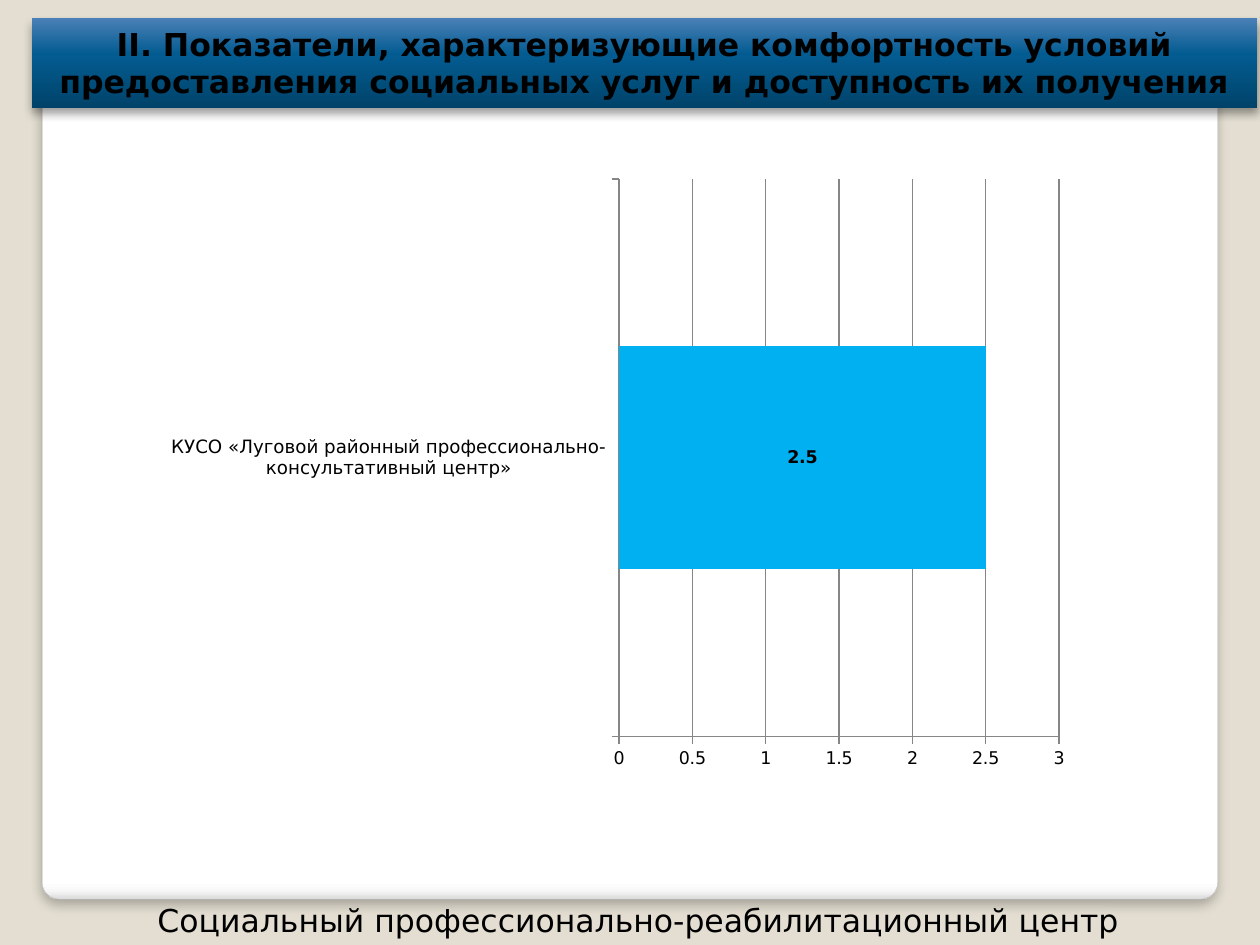
from lxml import etree
from pptx import Presentation
from pptx.chart.data import CategoryChartData
from pptx.dml.color import RGBColor
from pptx.enum.chart import XL_CHART_TYPE as ChartType, XL_LABEL_POSITION as LabelPosition
from pptx.enum.chart import XL_TICK_MARK as TickMark
from pptx.enum.shapes import MSO_SHAPE as ShapeType
from pptx.enum.text import MSO_ANCHOR as Anchor, MSO_AUTO_SIZE as AutoSize, PP_ALIGN as Align
from pptx.oxml import parse_xml
from pptx.oxml.ns import nsdecls, qn
from pptx.util import Cm, Pt

FONT = "DejaVu Sans"
BLACK = "000000"


def color(hex_string):
    return RGBColor.from_string(hex_string)


def style_font(font, size, bold=False):
    font.name = FONT
    font.size = Pt(size)
    font.bold = bold
    font.color.rgb = color(BLACK)


def set_gradient(shape, stops, angle):
    """Fill with (percent, hex) stops; the angle runs counter-clockwise."""
    shape.fill.gradient()
    shape.fill.gradient_angle = angle
    stop_list = shape.element.spPr.find(".//" + qn("a:gsLst"))
    for stop in list(stop_list):
        stop_list.remove(stop)
    for percent, hex_string in stops:
        stop = etree.SubElement(stop_list, qn("a:gs"), pos=str(percent * 1000))
        etree.SubElement(stop, qn("a:srgbClr"), val=hex_string)


def set_shadow(shape, opacity, blur, distance):
    """Drop a black shadow straight down."""
    shape.shadow.inherit = False
    effects = shape.element.spPr.find(qn("a:effectLst"))
    effects.append(parse_xml(
        f'<a:outerShdw {nsdecls("a")} blurRad="{Pt(blur)}" dist="{Pt(distance)}" '
        f'dir="5400000" algn="t" rotWithShape="0"><a:srgbClr val="{BLACK}">'
        f'<a:alpha val="{opacity * 1000}"/></a:srgbClr></a:outerShdw>'))


def place_text(shape, text, box, bold=False):
    shape.left, shape.top, shape.width, shape.height = box
    text_frame = shape.text_frame
    text_frame.word_wrap = True
    text_frame.auto_size = AutoSize.NONE
    text_frame.vertical_anchor = Anchor.TOP
    text_frame.text = text
    paragraph = text_frame.paragraphs[0]
    paragraph.alignment = Align.CENTER
    paragraph.line_spacing = 1.0
    paragraph.space_before = Pt(0)
    style_font(paragraph.runs[0].font, 18, bold)


def add_panel(slide, box):
    panel = slide.shapes.add_shape(ShapeType.ROUNDED_RECTANGLE, *box)
    panel.adjustments[0] = 0.02
    set_gradient(panel, [(0, "FFFFFF"), (98, "FFFFFF"), (99, "F7F7F7"), (100, "DADADA")], 270)
    panel.line.color.rgb = color("A4A4A4")
    panel.line.width = Pt(0.16)
    set_shadow(panel, 25, 6, 4)
    # The panel lies behind the title
    slide.shapes.title.element.addprevious(panel.element)


def format_title(slide, text, box):
    title = slide.shapes.title
    place_text(title, text, box, bold=True)
    set_gradient(title, [(0, "00436A"), (60, "035C91"), (100, "4A80B7")], 90)
    title.line.fill.background()
    set_shadow(title, 40, 5.2, 3)


def add_caption(slide, text, box):
    place_text(slide.shapes.add_textbox(*box), text, box)


def set_plot_area(chart, x, y, width, height):
    """Fix the inner plot area as fractions of the chart."""
    plot_area = chart.element.find(".//" + qn("c:plotArea"))
    for layout in plot_area.findall(qn("c:layout")):
        plot_area.remove(layout)
    layout = etree.Element(qn("c:layout"))
    manual = etree.SubElement(layout, qn("c:manualLayout"))
    settings = [("layoutTarget", "inner"), ("xMode", "edge"), ("yMode", "edge"),
                ("x", x), ("y", y), ("w", width), ("h", height)]
    for name, value in settings:
        etree.SubElement(manual, qn("c:" + name), val=str(value))
    plot_area.insert(0, layout)


def add_score_chart(slide, box):
    data = CategoryChartData()
    data.categories = ["КУСО «Луговой районный профессионально-консультативный центр»"]
    data.add_series("Series 1", [2.5])
    chart = slide.shapes.add_chart(ChartType.BAR_STACKED, *box, data).chart
    chart.has_legend = False
    chart.has_title = False
    style_font(chart.font, 10)
    set_plot_area(chart, 0.486, 0.028, 0.482, 0.898)

    # Bar and its value
    plot = chart.plots[0]
    plot.gap_width = 150
    plot.overlap = 100
    plot.vary_by_categories = False
    series = plot.series[0]
    series.format.fill.solid()
    series.format.fill.fore_color.rgb = color("00B0F0")
    labels = series.data_labels
    labels.show_value = True
    labels.position = LabelPosition.CENTER
    style_font(labels.font, 10, bold=True)

    # Axes and gridlines
    value_axis = chart.value_axis
    value_axis.minimum_scale, value_axis.maximum_scale = 0, 3
    value_axis.major_unit = 0.5
    value_axis.has_major_gridlines = True
    for axis, size in ((chart.category_axis, 10.5), (value_axis, 10)):
        axis.major_tick_mark = TickMark.OUTSIDE
        axis.minor_tick_mark = TickMark.NONE
        axis.format.line.color.rgb = color("868686")
        style_font(axis.tick_labels.font, size)
    value_axis.major_gridlines.format.line.color.rgb = color("868686")


def main():
    presentation = Presentation()
    presentation.slide_width, presentation.slide_height = Cm(25.4), Cm(19.05)
    slide = presentation.slides.add_slide(presentation.slide_layouts[5])
    slide.background.fill.solid()
    slide.background.fill.fore_color.rgb = color("E3DED1")

    format_title(slide, "II. Показатели, характеризующие комфортность условий "
                 "предоставления социальных услуг и доступность их получения",
                 (Cm(0.64), Cm(0.37), Cm(24.7), Cm(1.8)))
    add_panel(slide, (Cm(0.85), Cm(0.91), Cm(23.7), Cm(17.22)))
    add_caption(slide, "Социальный профессионально-реабилитационный центр",
                (Cm(0.64), Cm(18.03), Cm(24.46), Cm(1.02)))
    add_score_chart(slide, (Cm(3.45), Cm(3.26), Cm(18.49), Cm(12.52)))
    presentation.save("out.pptx")


if __name__ == "__main__":
    main()
